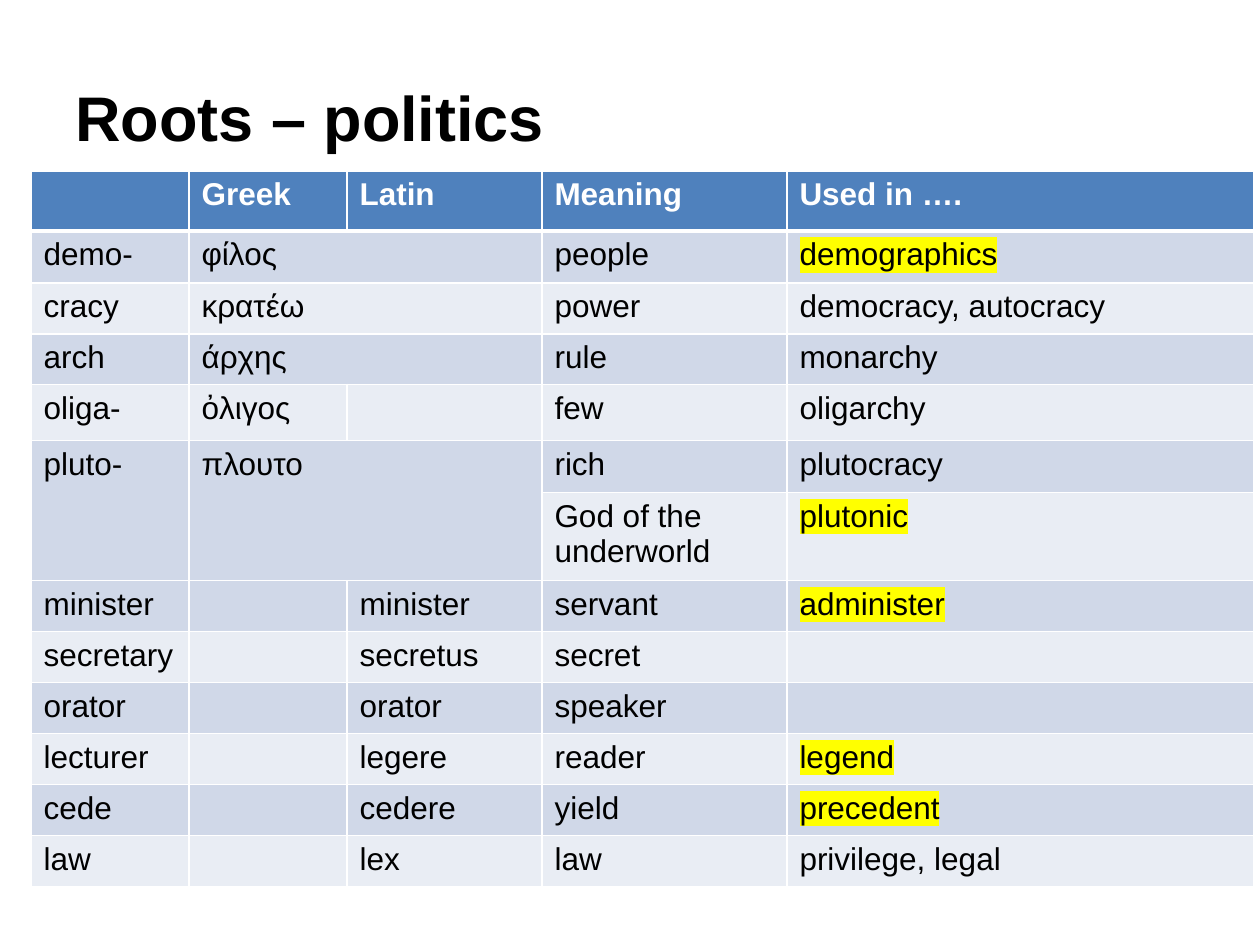
from lxml import etree
from pptx import Presentation
from pptx import util as u
from pptx.dml.color import RGBColor
from pptx.enum import text
from pptx.oxml.ns import qn

SCALE = u.Inches(1) / 126


class Theme:
    font = "Arial"
    title_size, body_size = u.Pt(36), u.Pt(18)
    ink, paper = "000000", "FFFFFF"
    header, bands = "4F81BD", ("D0D8E8", "E9EDF4")
    highlight = "FFFF00"
    thin, thick = u.Pt(1), u.Pt(3)


def px(n):
    return u.Emu(round(n * SCALE))


def add_run(p, words, size, color, bold=False):
    r = p.add_run()
    r.text = words
    r.font.size, r.font.bold = size, bold
    r.font.color.rgb = RGBColor.from_string(color)
    r.font.name = Theme.font
    return r


prs = Presentation()
prs.slide_width, prs.slide_height = px(1260), px(945)
s = prs.slides.add_slide(prs.slide_layouts[6])

# Title
title = s.shapes.add_textbox(px(63), px(38), px(1134), px(157))
tf = title.text_frame
tf.word_wrap = True
tf.vertical_anchor = text.MSO_ANCHOR.MIDDLE
add_run(tf.paragraphs[0], "Roots – politics", Theme.title_size, Theme.ink, True)

# Roots table: root, Greek, Latin, meaning, derived words
rows = [
    ("", "Greek", "Latin", "Meaning", "Used in …."),
    ("demo-", "φίλος", "", "people", "demographics"),
    ("cracy", "κρατέω", "", "power", "democracy, autocracy"),
    ("arch", "άρχης", "", "rule", "monarchy"),
    ("oliga-", "ὀλιγος", "", "few", "oligarchy"),
    ("pluto-", "πλουτο", "", "rich", "plutocracy"),
    ("", "", "", "God of the underworld", "plutonic"),
    ("minister", "", "minister", "servant", "administer"),
    ("secretary", "", "secretus", "secret", ""),
    ("orator", "", "orator", "speaker", ""),
    ("lecturer", "", "legere", "reader", "legend"),
    ("cede", "", "cedere", "yield", "precedent"),
    ("law", "", "lex", "law", "privilege, legal"),
]
highlighted = {"demographics", "plutonic", "administer", "legend", "precedent"}
merges = [((1, 1), (1, 2)), ((2, 1), (2, 2)), ((3, 1), (3, 2)),
          ((5, 0), (6, 0)), ((5, 1), (6, 2))]
col_widths = [158, 158, 195, 245, 467]
row_heights = [60, 52, 51, 48, 56, 52, 83] + [51] * 6

frame = s.shapes.add_table(len(rows), len(col_widths), px(31), px(171),
                           px(sum(col_widths)), px(sum(row_heights)))
table = frame.table
for col, width in zip(table.columns, col_widths):
    col.width = px(width)
for row, height in zip(table.rows, row_heights):
    row.height = px(height)

for i, row in enumerate(rows):
    is_header = i == 0
    for j, words in enumerate(row):
        cell = table.cell(i, j)
        tcPr = cell._tc.get_or_add_tcPr()
        for side in ("lnL", "lnR", "lnT", "lnB"):
            under_header = (i, side) in ((0, "lnB"), (1, "lnT"))
            line = etree.SubElement(tcPr, qn(f"a:{side}"),
                                    w=str(Theme.thick if under_header else Theme.thin))
            paint = etree.SubElement(line, qn("a:solidFill"))
            etree.SubElement(paint, qn("a:srgbClr"), val=Theme.paper)
        cell.fill.solid()
        fill = Theme.header if is_header else Theme.bands[(i - 1) % 2]
        cell.fill.fore_color.rgb = RGBColor.from_string(fill)
        if not words:
            continue
        r = add_run(cell.text_frame.paragraphs[0], words, Theme.body_size,
                    Theme.paper if is_header else Theme.ink, is_header)
        if words in highlighted:
            mark = etree.Element(qn("a:highlight"))
            etree.SubElement(mark, qn("a:srgbClr"), val=Theme.highlight)
            r.font._element.find(qn("a:solidFill")).addnext(mark)

for first, last in merges:
    table.cell(*first).merge(table.cell(*last))

prs.save("out.pptx")
